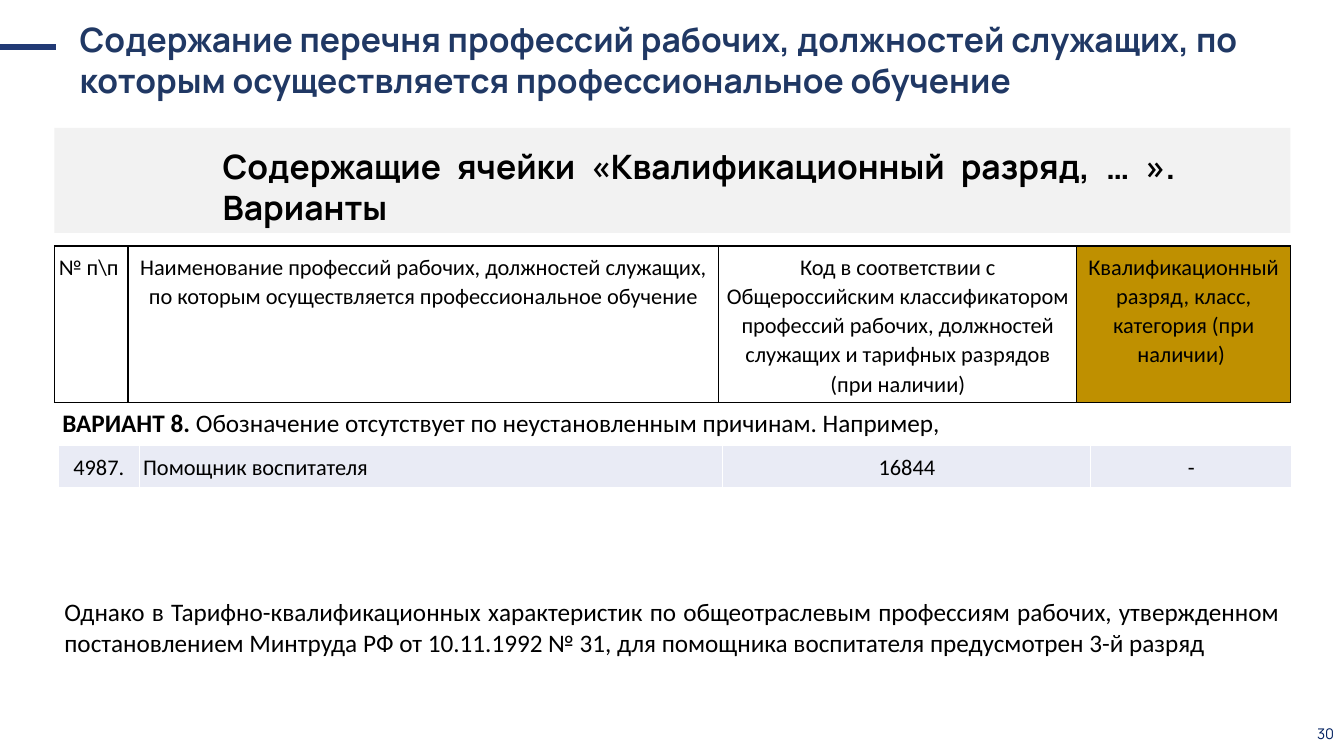
from lxml.etree import SubElement
from pptx import Presentation
from pptx.dml.color import RGBColor
from pptx.enum.shapes import MSO_CONNECTOR, MSO_SHAPE
from pptx.enum.text import MSO_ANCHOR, MSO_AUTO_SIZE, PP_ALIGN
from pptx.oxml.ns import qn
from pptx.util import Inches, Pt

HEADING = {"name": "Manrope", "size": Pt(24), "bold": True}
BODY = {"name": "Calibri", "size": Pt(18), "bold": False}
CELL = {"name": "Calibri", "size": Pt(16), "bold": False}
PAGE = {"name": "Manrope", "size": Pt(10.5), "bold": False}
CELL_SPACING = {"line_spacing": 1.06, "space_after": Pt(8)}
CELL_MARGINS = {
    "margin_left": Inches(0.04), "margin_right": Inches(0.04),
    "margin_top": Inches(0.07), "margin_bottom": Inches(0.07),
}


def rgb(color):
    return RGBColor.from_string(color)


def apply(target, values):
    for key, value in values.items():
        setattr(target, key, value)


def place(shape, box):
    names = ("left", "top", "width", "height")
    apply(shape, dict(zip(names, map(Inches, box))))


def write(frame, runs, color="000000", **spacing):
    """Fill the first paragraph with (text, font values) runs."""
    paragraph = frame.paragraphs[0]
    apply(paragraph, spacing)
    for text, font in runs:
        run = paragraph.add_run()
        run.text = text
        apply(run.font, font)
        run.font.color.rgb = rgb(color)


def add_title(slide, box, text, color):
    title = slide.shapes.title
    place(title, box)
    apply(title.text_frame, {"word_wrap": True, "auto_size": MSO_AUTO_SIZE.NONE,
                             "vertical_anchor": MSO_ANCHOR.TOP})
    write(title.text_frame, [(text, HEADING)], color, alignment=PP_ALIGN.LEFT)


def add_text(slide, box, runs, color="000000", anchor=MSO_ANCHOR.TOP, **spacing):
    frame = slide.shapes.add_textbox(*map(Inches, box)).text_frame
    apply(frame, {"word_wrap": True, "vertical_anchor": anchor})
    write(frame, runs, color, **spacing)


def add_band(slide, box, color):
    band = slide.shapes.add_shape(MSO_SHAPE.RECTANGLE, *map(Inches, box))
    band.shadow.inherit = False
    band.fill.solid()
    band.fill.fore_color.rgb = rgb(color)
    band.line.fill.background()


def add_line(slide, ends, color, width):
    line = slide.shapes.add_connector(MSO_CONNECTOR.STRAIGHT, *map(Inches, ends))
    line.line.color.rgb = rgb(color)
    line.line.width = Pt(width)
    SubElement(line._element.spPr, qn("a:effectLst"))


def set_borders(cell, color):
    properties = cell._tc.get_or_add_tcPr()
    for position, side in enumerate(("lnL", "lnR", "lnT", "lnB")):
        border = SubElement(properties, qn(f"a:{side}"), w=str(Pt(1)))
        fill = SubElement(border, qn("a:solidFill"))
        SubElement(fill, qn("a:srgbClr"), val=color)
        properties.insert(position, border)


def add_row_table(slide, box, widths, entries, border):
    """Draw a one-row table from (text, alignment, fill) entries."""
    table = slide.shapes.add_table(1, len(widths), *map(Inches, box)).table
    apply(table, {"first_row": False, "horz_banding": False})
    for column, width in zip(table.columns, widths):
        column.width = Inches(width)
    for cell, (text, alignment, fill) in zip(table.rows[0].cells, entries):
        apply(cell, CELL_MARGINS)
        write(cell.text_frame, [(text, CELL)], alignment=alignment, **CELL_SPACING)
        if fill:
            cell.fill.solid()
            cell.fill.fore_color.rgb = rgb(fill)
        else:
            cell.fill.background()
        set_borders(cell, border)


def main():
    deck = Presentation()
    apply(deck, {"slide_width": Inches(13.33), "slide_height": Inches(7.5)})
    slide = deck.slides.add_slide(deck.slide_layouts[5])
    left, center, justify = PP_ALIGN.LEFT, PP_ALIGN.CENTER, PP_ALIGN.JUSTIFY

    # Heading and subheading
    add_band(slide, (0.54, 1.27, 12.26, 1.04), "F2F2F2")
    add_text(slide, (2.11, 1.4, 9.65, 0.91),
             [("Содержащие ячейки «Квалификационный разряд, … ». Варианты", HEADING)],
             alignment=justify)
    add_title(slide, (0.69, 0.14, 12.11, 0.91),
              "Содержание перечня профессий рабочих, должностей служащих, "
              "по которым осуществляется профессиональное обучение", "203864")
    add_line(slide, (0, 0.47, 0.56, 0.47), "213A75", 4.5)

    # Page number
    add_text(slide, (12.81, 7.08, 0.52, 0.4), [("30", PAGE)], "002060",
             MSO_ANCHOR.MIDDLE, alignment=PP_ALIGN.RIGHT)

    # Column headings of the list
    add_row_table(slide, (0.54, 2.44, 12.26, 1.54), (0.73, 5.86, 3.55, 2.12), [
        (r"№ п\п ", center, None),
        ("Наименование профессий рабочих, должностей служащих, "
         "по которым осуществляется профессиональное обучение", center, None),
        ("Код в соответствии с Общероссийским классификатором профессий рабочих, "
         "должностей служащих и тарифных разрядов (при наличии)", center, None),
        ("Квалификационный разряд, класс, категория (при наличии) ", center, "BF9000"),
    ], "000000")

    # Variant with its example row
    add_text(slide, (0.52, 3.84, 12.25, 1.03), [
        ("ВАРИАНТ 8.", {**BODY, "bold": True}),
        (" Обозначение отсутствует по неустановленным причинам. Например,", BODY),
    ], alignment=justify, line_spacing=1.5, space_after=Pt(8))
    example = (("4987.", center), ("Помощник воспитателя", left),
               ("16844", center), ("-", center))
    add_row_table(slide, (0.58, 4.42, 12.23, 0.41), (0.8, 5.79, 3.65, 1.99),
                  [(*entry, "E9EBF5") for entry in example], "FFFFFF")

    # Remark
    add_text(slide, (0.54, 5.87, 12.25, 0.71), [(
        "Однако в Тарифно-квалификационных характеристик по общеотраслевым "
        "профессиям рабочих, утвержденном постановлением Минтруда РФ от "
        "10.11.1992 № 31, для помощника воспитателя предусмотрен 3-й разряд", BODY,
    )], alignment=justify)

    deck.save("out.pptx")


if __name__ == "__main__":
    main()
